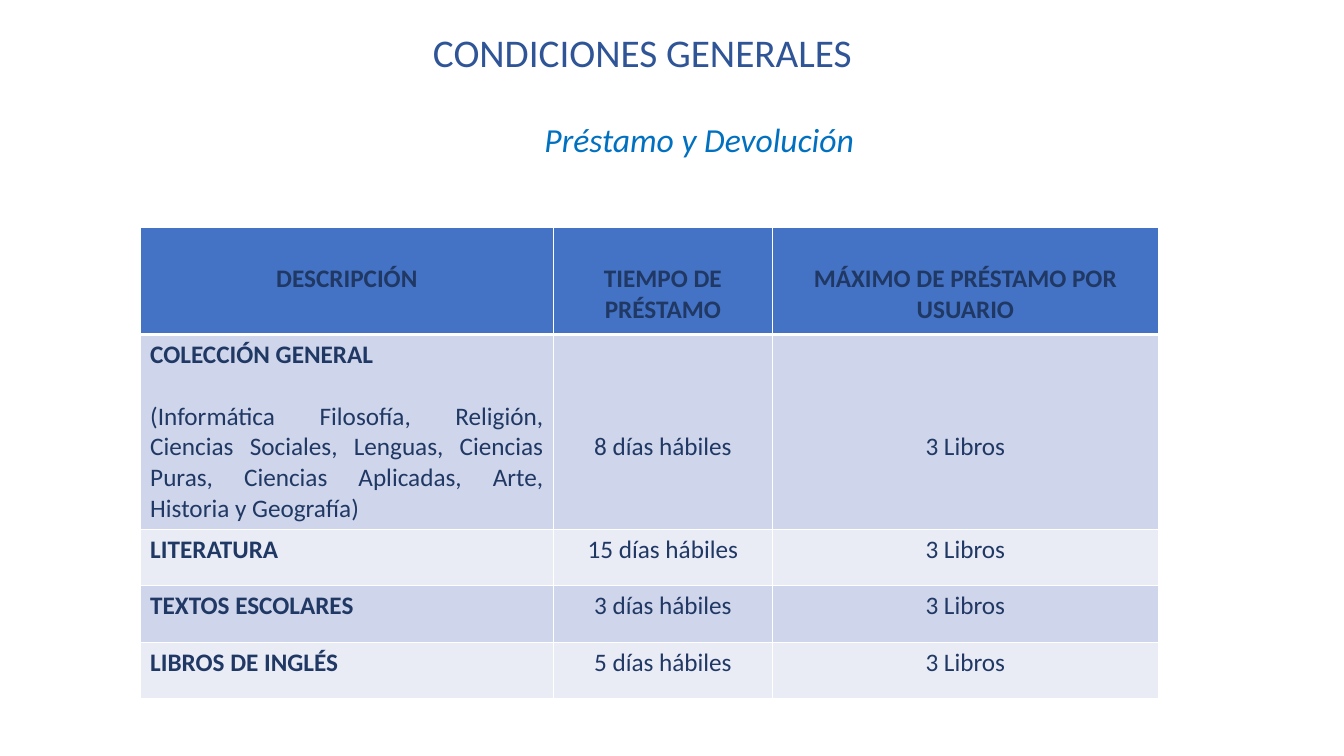
from pptx import Presentation
from pptx.util import Inches, Pt
from pptx.dml.color import RGBColor as RGB
from pptx.enum.text import PP_ALIGN as Align
from pptx.oxml import parse_xml
from pptx.oxml.ns import nsdecls

# Content
TITLE = "CONDICIONES GENERALES"
SUB = "Préstamo y Devolución"
HEAD = ["DESCRIPCIÓN", "TIEMPO DE PRÉSTAMO", "MÁXIMO DE PRÉSTAMO POR USUARIO"]
TOPICS = ("(Informática Filosofía, Religión, Ciencias Sociales, Lenguas, "
          "Ciencias Puras, Ciencias Aplicadas, Arte, Historia y Geografía)")
LOANS = [
    ("COLECCIÓN GENERAL", "8 días hábiles", "3 Libros"),
    ("LITERATURA", "15 días hábiles", "3 Libros"),
    ("TEXTOS ESCOLARES", "3 días hábiles", "3 Libros"),
    ("LIBROS DE INGLÉS", "5 días hábiles", "3 Libros"),
]

# Colours and grid
NAVY, BLUE, SKY = RGB(32, 56, 100), RGB(47, 85, 151), RGB(0, 112, 192)
HEADER, BANDS = RGB(68, 114, 196), (RGB(207, 213, 234), RGB(233, 235, 245))
COLS = (4.1, 2.17, 3.83)
ROWS = (1.06, 1.9) + (0.56,) * 3
LEFT, TOP = 1.39, 2.26
LINE, PAD = 0.305, 0.05  # height of a text line, cell padding


def write(par, text, size=18, color=NAVY, bold=False, italic=False,
          align=Align.CENTER, before=0):
    par.alignment = align
    par.space_before = Pt(before)
    run = par.add_run()
    run.text = text
    font = run.font
    font.name, font.size, font.bold, font.italic = "Calibri", Pt(size), bold, italic
    font.color.rgb = color


def label(slide, text, box, **style):
    frame = slide.shapes.add_textbox(*map(Inches, box)).text_frame
    frame.word_wrap = True
    write(frame.paragraphs[0], text, **style)


def edge(cell, widths):
    props = cell._tc.get_or_add_tcPr()
    for side, width in zip("LRTB", widths):
        props.append(parse_xml(
            f'<a:ln{side} {nsdecls("a")} w="{Pt(width)}"><a:solidFill>'
            f'<a:srgbClr val="FFFFFF"/></a:solidFill></a:ln{side}>'))


def main():
    deck = Presentation()
    deck.slide_width, deck.slide_height = Inches(13.33), Inches(7.5)
    slide = deck.slides.add_slide(deck.slide_layouts[6])

    # Loan table
    grid = slide.shapes.add_table(
        len(ROWS), len(COLS), Inches(LEFT), Inches(TOP),
        Inches(sum(COLS)), Inches(sum(ROWS))).table
    for col, width in zip(grid.columns, COLS):
        col.width = Inches(width)
    for row, height in zip(grid.rows, ROWS):
        row.height = Inches(height)

    for r, texts in enumerate([HEAD] + LOANS):
        for c, text in enumerate(texts):
            cell = grid.cell(r, c)
            edge(cell, (1, 1, 3 if r == 1 else 1, 3 if r == 0 else 1))
            cell.fill.solid()
            cell.fill.fore_color.rgb = BANDS[(r - 1) % 2] if r else HEADER
            # Lines left free above the text
            skip = 1 if r == 0 else 3 if r == 1 and c else 0
            cell.margin_top = Inches(PAD + skip * LINE)
            write(cell.text_frame.paragraphs[0], text, bold=r == 0 or c == 0,
                  align=Align.LEFT if r and c == 0 else Align.CENTER)
    write(grid.cell(1, 0).text_frame.add_paragraph(), TOPICS,
          align=Align.JUSTIFY, before=22)

    # Headings
    label(slide, SUB, (3.99, 1.13, 5.89, 0.5), size=24, color=SKY, italic=True)
    label(slide, TITLE, (3.53, 0.23, 5.68, 0.57), size=28, color=BLUE)

    deck.save("out.pptx")


if __name__ == "__main__":
    main()
